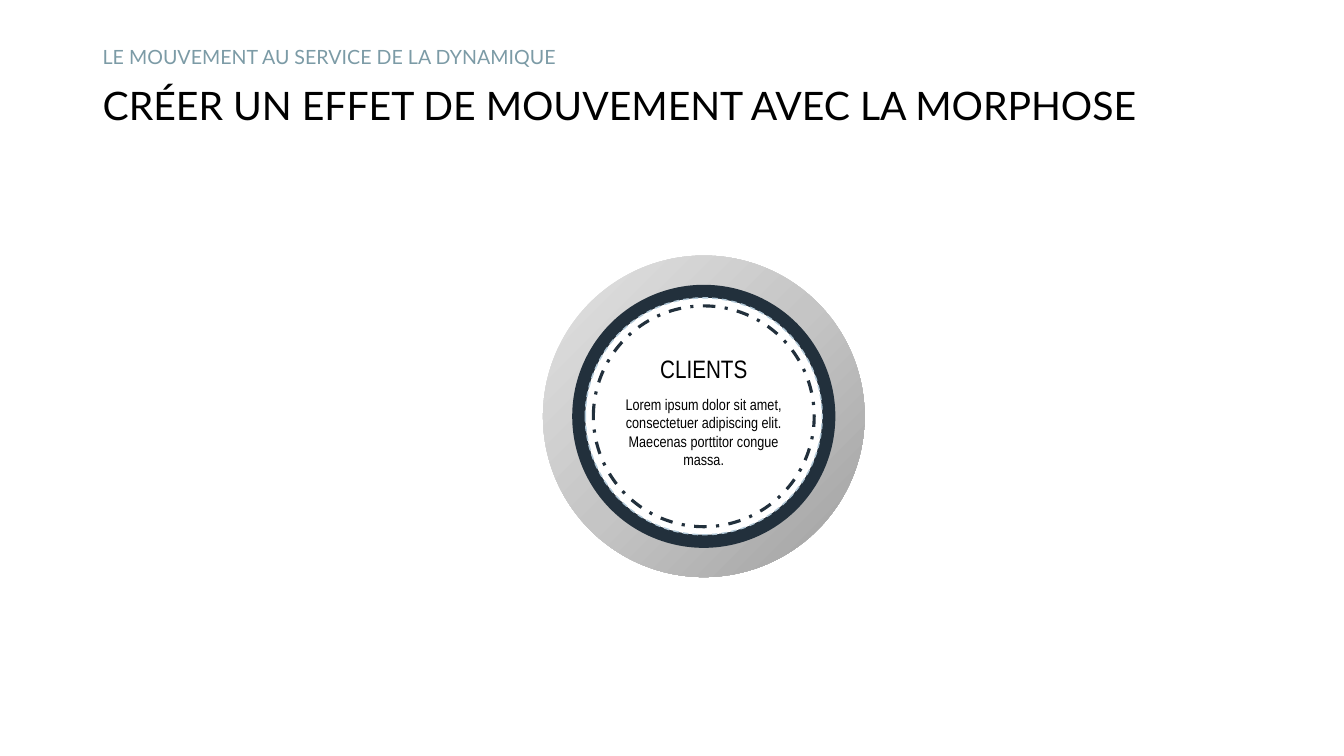
from pptx import Presentation
from pptx.dml.color import RGBColor
from pptx.enum.dml import MSO_LINE
from pptx.enum.shapes import MSO_SHAPE
from pptx.enum.text import MSO_ANCHOR, MSO_AUTO_SIZE, PP_ALIGN
from pptx.oxml import parse_xml
from pptx.oxml.ns import nsdecls
from pptx.util import Inches, Pt

COLORS = {
    "black": "000000",
    "subtitle": "7C9BA6",
    "navy": "22303C",
    "white": "FFFFFF",
    "pale_blue": "B2C8D7",
    "ring_dark": "A0A0A0",
    "ring_mid": "C5C5C5",
    "ring_light": "E3E3E3",
}


def rgb(name):
    return RGBColor.from_string(COLORS[name])


def add_text(shapes, box, text, font, size, color):
    s = shapes.add_textbox(*[Inches(v) for v in box])
    tf = s.text_frame
    tf.word_wrap = True
    p = tf.paragraphs[0]
    r = p.add_run()
    r.text = text
    r.font.name = font
    r.font.size = Pt(size)
    r.font.color.rgb = rgb(color)
    return tf, p


prs = Presentation()
prs.slide_width = Inches(13.33)
prs.slide_height = Inches(7.5)
slide = prs.slides.add_slide(prs.slide_layouts[6])

headings = [
    ((0.92, 0.78, 11.5, 0.57), "CRÉER UN EFFET DE MOUVEMENT AVEC LA MORPHOSE", 28, "black", 0),
    ((0.92, 0.4, 11.5, 0.36), "LE MOUVEMENT AU SERVICE DE LA DYNAMIQUE", 14, "subtitle", 10),
]
for box, text, size, color, before in headings:
    tf, p = add_text(slide.shapes, box, text, "Lato", size, color)
    tf.vertical_anchor = MSO_ANCHOR.MIDDLE
    p.line_spacing = 0.9
    p.space_before = Pt(before)

badge = slide.shapes.add_group_shape()
center_x, center_y = 6.98, 4.13
circles = [
    (3.19, None, None),
    (2.61, "navy", None),
    (2.35, "white", ("pale_blue", 1, MSO_LINE.DASH)),
    (2.19, "white", ("navy", 2.25, MSO_LINE.DASH_DOT)),
]
for size, fill, line in circles:
    s = badge.shapes.add_shape(
        MSO_SHAPE.OVAL,
        Inches(center_x - size / 2), Inches(center_y - size / 2),
        Inches(size), Inches(size),
    )
    s.shadow.inherit = False
    if fill:
        s.fill.solid()
        s.fill.fore_color.rgb = rgb(fill)
    else:
        stops = "".join(
            f'<a:gs pos="{pos * 1000}"><a:srgbClr val="{COLORS[name]}"/></a:gs>'
            for pos, name in [(0, "ring_dark"), (50, "ring_mid"), (100, "ring_light")]
        )
        gradient = parse_xml(
            f'<a:gradFill {nsdecls("a")} rotWithShape="1"><a:gsLst>{stops}</a:gsLst>'
            '<a:path path="circle"><a:fillToRect l="100000" t="100000"/></a:path>'
            '<a:tileRect r="-100000" b="-100000"/></a:gradFill>'
        )
        s._element.spPr.insert(2, gradient)
    if line:
        color, width, dash = line
        s.line.color.rgb = rgb(color)
        s.line.width = Pt(width)
        s.line.dash_style = dash
    else:
        s.line.fill.background()

captions = [
    ((5.39, 3.46, 3.18, 0.4), "CLIENTS", 18),
    ((6.06, 3.87, 1.84, 0.84),
     "Lorem ipsum dolor sit amet, consectetuer adipiscing elit. Maecenas porttitor congue massa.", 11),
]
for box, text, size in captions:
    tf, p = add_text(badge.shapes, box, text, "Arial Narrow", size, "black")
    tf.auto_size = MSO_AUTO_SIZE.SHAPE_TO_FIT_TEXT
    p.alignment = PP_ALIGN.CENTER

prs.save("out.pptx")
